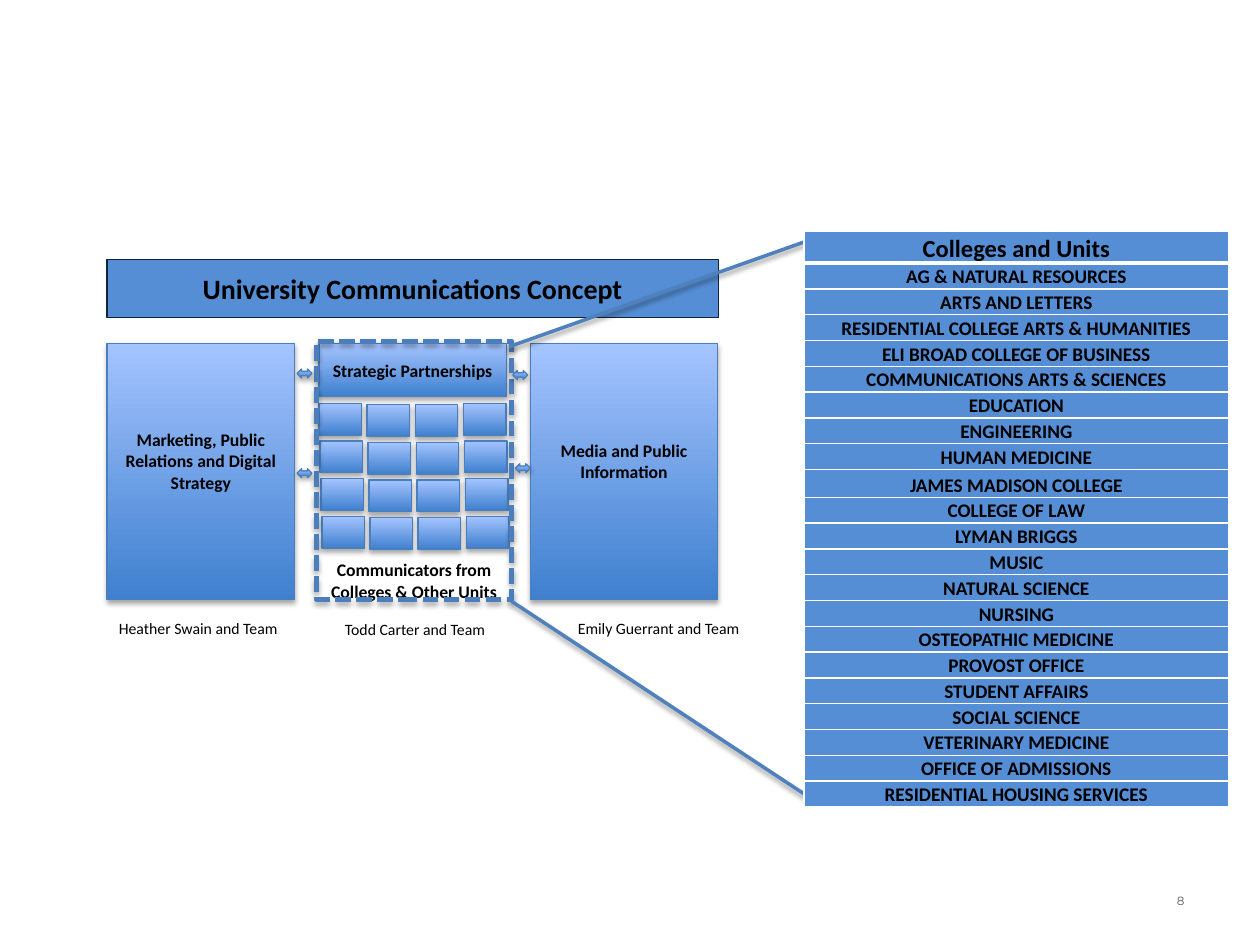
from dataclasses import dataclass

from lxml import etree
from pptx import Presentation
from pptx import util as u
from pptx.dml.color import RGBColor
from pptx.enum import dml, shapes, text
from pptx.oxml import ns


@dataclass(frozen=True)
class Theme:
    font: str = "Calibri"
    number_font: str = "Montserrat"
    ink: str = "000000"
    number_ink: str = "595959"
    panel: str = "558ED5"
    title_line: str = "0F243E"
    gradient: tuple = ("3F80CE", "A4C4FF")
    outline: str = "4B7EBC"
    callout: str = "4F81BD"
    white: str = "FFFFFF"
    title_size: float = 16
    header_size: float = 14
    row_size: float = 11
    label_size: float = 10.1
    caption_size: float = 9
    number_size: float = 6.8


THEME = Theme()


@dataclass(frozen=True)
class Box:
    """Position and size in centimetres."""
    left: float
    top: float
    width: float
    height: float

    def lengths(self) -> tuple:
        return tuple(u.Cm(v) for v in (self.left, self.top, self.width, self.height))


@dataclass(frozen=True)
class Label:
    box: Box
    words: str


PILLARS = (
    Label(Box(10.69, 6.93, 3.78, 5.16), "Media and Public Information"),
    Label(Box(2.16, 6.93, 3.78, 5.16), "Marketing, Public Relations and Digital Strategy"),
)
PARTNERSHIPS = Label(Box(6.43, 6.93, 3.78, 1.07), "Strategic Partnerships")
COMMUNICATORS = Label(Box(6.38, 11.15, 3.94, 1.12), "Communicators from\nColleges & Other Units")
FRAME = Box(6.38, 6.88, 3.94, 5.21)
ARROWS = [Box(left, top, 0.3, 0.18)
          for left, top in ((5.99, 7.44), (10.34, 7.47), (5.99, 9.45), (10.39, 9.35))]
CAPTIONS = (
    Label(Box(1.85, 12.34, 4.29, 0.64), "Heather Swain and Team"),
    Label(Box(6.22, 12.37, 4.29, 0.64), "Todd Carter and Team"),
    Label(Box(11.13, 12.34, 4.29, 0.64), "Emily Guerrant and Team"),
)
TITLE = Label(Box(2.16, 5.23, 12.32, 1.17), "University Communications Concept")
CALLOUTS = ((10.26, 6.99, 16.43, 4.8), (10.31, 12.12, 16.28, 16.05))
PAGE_NUMBER = Label(Box(18.21, 17.65, 5.92, 1.02), "8")
TABLE = Box(16.21, 4.67, 8.56, 11.53)
TABLE_HEADER = "Colleges and Units"
UNITS = (
    "AG & NATURAL RESOURCES", "ARTS AND LETTERS",
    "RESIDENTIAL COLLEGE ARTS & HUMANITIES", "ELI BROAD COLLEGE OF BUSINESS",
    "COMMUNICATIONS ARTS & SCIENCES", "EDUCATION", "ENGINEERING",
    "HUMAN MEDICINE", "JAMES MADISON COLLEGE", "COLLEGE OF LAW",
    "LYMAN BRIGGS", "MUSIC", "NATURAL SCIENCE", "NURSING",
    "OSTEOPATHIC MEDICINE", "PROVOST OFFICE", "STUDENT AFFAIRS",
    "SOCIAL SCIENCE", "VETERINARY MEDICINE", "OFFICE OF ADMISSIONS",
    "RESIDENTIAL HOUSING SERVICES",
)


def rgb(value: str) -> RGBColor:
    return RGBColor.from_string(value)


def write(frame, words: str, *, size: float, bold: bool = False, font: str = THEME.font,
          color: str = THEME.ink, align=text.PP_ALIGN.CENTER,
          anchor=text.MSO_ANCHOR.MIDDLE, spacing: float = 1) -> None:
    frame.word_wrap = True
    frame.vertical_anchor = anchor
    frame.text = words
    for paragraph in frame.paragraphs:
        paragraph.alignment = align
        paragraph.line_spacing = spacing
        paragraph.font.size = u.Pt(size)
        paragraph.font.bold = bold
        paragraph.font.name = font
        paragraph.font.color.rgb = rgb(color)


def cast_shadow(effects, opacity: int) -> None:
    shadow = etree.SubElement(effects, ns.qn("a:outerShdw"), blurRad=str(u.Pt(3.1)),
                              dist=str(u.Pt(1.8)), dir="5400000", rotWithShape="0")
    color = etree.SubElement(shadow, ns.qn("a:srgbClr"), val=THEME.ink)
    etree.SubElement(color, ns.qn("a:alpha"), val=str(opacity * 1000))


def add_block(slide, box: Box, kind=shapes.MSO_SHAPE.RECTANGLE):
    """Add a preset shape with a gradient fill, a thin outline and a soft shadow."""
    shape = slide.shapes.add_shape(kind, *box.lengths())
    shape.fill.gradient()
    shape.fill.gradient_angle = 90
    for stop, color in zip(shape.fill.gradient_stops, THEME.gradient):
        stop.color.rgb = rgb(color)
    shape.line.color.rgb = rgb(THEME.outline)
    shape.line.width = u.Pt(0.75)
    shape.shadow.inherit = False
    cast_shadow(shape._element.spPr.find(ns.qn("a:effectLst")), 35)
    return shape


def add_text(slide, label: Label, **style) -> None:
    shape = slide.shapes.add_textbox(*label.box.lengths())
    write(shape.text_frame, label.words, **style)


def add_unit_grid(slide) -> None:
    """Four by four tiles; each row drifts right and the middle columns sit lower."""
    for row in range(4):
        for column in range(4):
            drop = 0.03 if column in (1, 2) else 0
            add_block(slide, Box(6.43 + 0.97 * column + 0.02 * row,
                                 8.13 + 0.76 * row + drop, 0.86, 0.64))


def add_frame(slide) -> None:
    frame = add_block(slide, FRAME)
    frame.fill.background()
    frame.line.width = u.Pt(3)
    frame.line.dash_style = dml.MSO_LINE.SQUARE_DOT


def add_title(slide) -> None:
    title = slide.shapes.add_shape(shapes.MSO_SHAPE.RECTANGLE, *TITLE.box.lengths())
    title.shadow.inherit = False
    title.fill.solid()
    title.fill.fore_color.rgb = rgb(THEME.panel)
    title.line.color.rgb = rgb(THEME.title_line)
    title.line.width = u.Pt(0.75)
    write(title.text_frame, TITLE.words, size=THEME.title_size, bold=True)


def add_callout(slide, ends: tuple) -> None:
    line = slide.shapes.add_connector(shapes.MSO_CONNECTOR.STRAIGHT, *map(u.Cm, ends))
    line.line.color.rgb = rgb(THEME.callout)
    line.line.width = u.Pt(2)
    cast_shadow(etree.SubElement(line._element.spPr, ns.qn("a:effectLst")), 38)


def set_borders(cell, top: float, bottom: float) -> None:
    properties = cell._tc.get_or_add_tcPr()
    widths = {"a:lnL": 1, "a:lnR": 1, "a:lnT": top, "a:lnB": bottom}
    for index, (tag, width) in enumerate(widths.items()):
        border = etree.Element(ns.qn(tag), w=str(u.Pt(width)))
        fill = etree.SubElement(border, ns.qn("a:solidFill"))
        etree.SubElement(fill, ns.qn("a:srgbClr"), val=THEME.white)
        properties.insert(index, border)


def add_units_table(slide) -> None:
    entries = (TABLE_HEADER, *UNITS)
    table = slide.shapes.add_table(len(entries), 1, *TABLE.lengths()).table
    table.first_row = table.horz_banding = False
    for index, entry in enumerate(entries):
        header = index == 0
        tall = entry == "JAMES MADISON COLLEGE"
        table.rows[index].height = u.Cm(0.62 if header else 0.56 if tall else 0.52)
        cell = table.cell(index, 0)
        cell.margin_left = cell.margin_right = u.Cm(0.15)
        cell.margin_top = cell.margin_bottom = 0
        cell.vertical_anchor = text.MSO_ANCHOR.BOTTOM
        cell.fill.solid()
        cell.fill.fore_color.rgb = rgb(THEME.panel)
        set_borders(cell, top=3 if index == 1 else 1, bottom=3 if header else 1)
        write(cell.text_frame, entry, bold=True, spacing=1.07,
              size=THEME.header_size if header else THEME.row_size,
              anchor=text.MSO_ANCHOR.BOTTOM)


def main() -> None:
    presentation = Presentation()
    presentation.slide_width, presentation.slide_height = u.Cm(25.4), u.Cm(19.05)
    slide = presentation.slides.add_slide(presentation.slide_layouts[6])

    for pillar in PILLARS:
        frame = add_block(slide, pillar.box).text_frame
        frame.margin_bottom = u.Cm(0.56)
        write(frame, pillar.words, size=THEME.label_size, bold=True)
    write(add_block(slide, PARTNERSHIPS.box).text_frame, PARTNERSHIPS.words,
          size=THEME.label_size, bold=True)
    add_unit_grid(slide)
    add_text(slide, COMMUNICATORS, size=THEME.label_size, bold=True,
             anchor=text.MSO_ANCHOR.TOP)
    add_frame(slide)
    for arrow in ARROWS:
        add_block(slide, arrow, shapes.MSO_SHAPE.LEFT_RIGHT_ARROW)
    for caption in CAPTIONS:
        add_text(slide, caption, size=THEME.caption_size, anchor=text.MSO_ANCHOR.TOP)
    add_title(slide)
    for ends in CALLOUTS:
        add_callout(slide, ends)
    add_units_table(slide)
    add_text(slide, PAGE_NUMBER, size=THEME.number_size, font=THEME.number_font,
             color=THEME.number_ink, align=text.PP_ALIGN.RIGHT)
    presentation.save("out.pptx")


if __name__ == "__main__":
    main()
